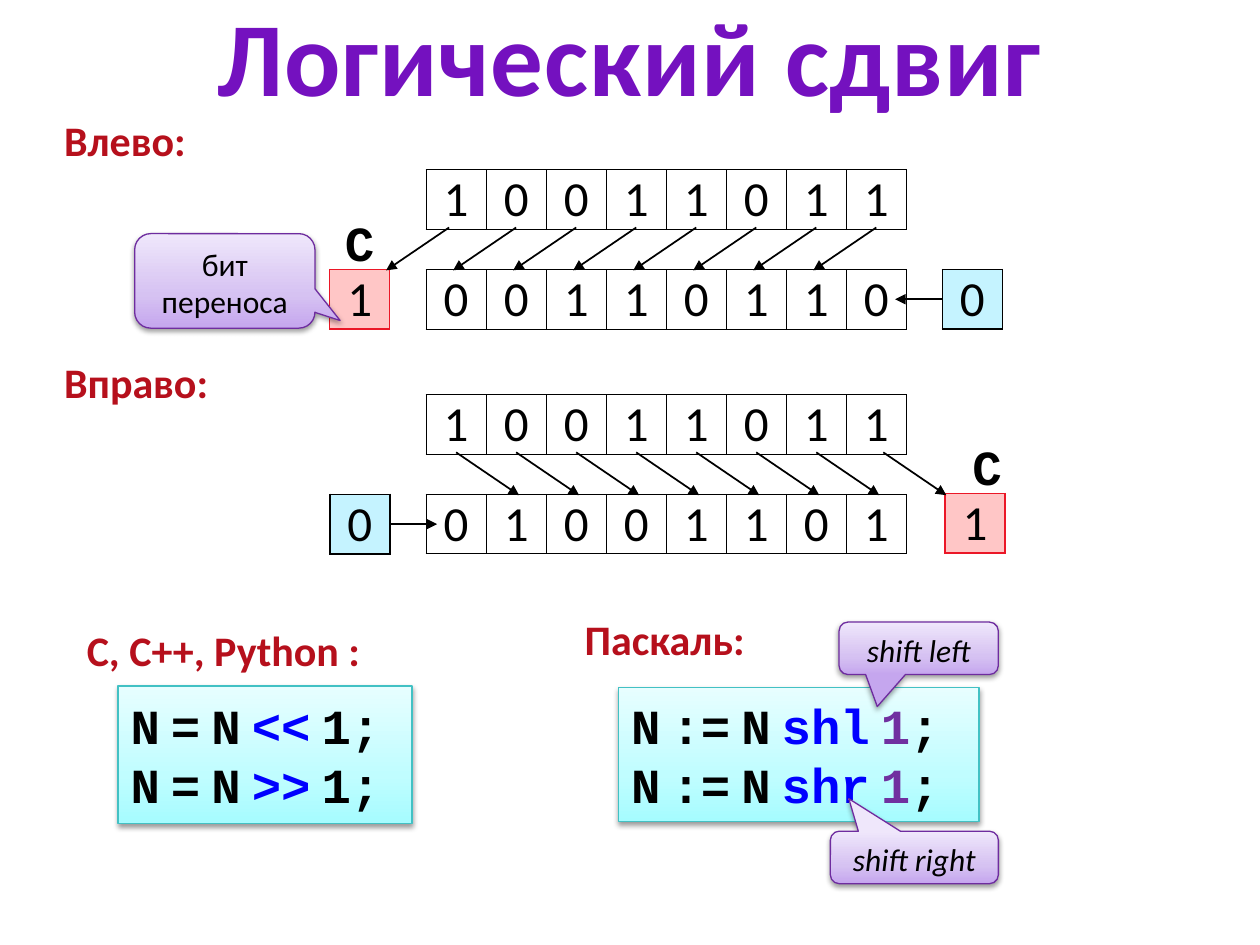
from lxml import etree
from pptx import Presentation
from pptx import util as u
from pptx.dml import color
from pptx.enum import shapes, text
from pptx.oxml import ns, xmlchemy
from pptx import oxml

COLORS = {"black": "000000", "title": "7411BF", "heading": "B6101C", "keyword": "0000FF",
          "number": "7030A0", "carry": "FFC6C6", "carry_line": "EB1727", "input": "C5F3FF",
          "callout_line": "6E2C9F", "code_line": "42C1C4"}
GRADIENTS = {"callout": ("C5A6EE", "D6C2F2", "EFE7FB"), "code": ("A6FCFF", "C0FDFF", "E7FEFF")}
FORMATS = {
    "title": {"name": "Calibri", "size": u.Pt(60), "bold": True},
    "heading": {"name": "Calibri", "size": u.Pt(24), "bold": True},
    "bit": {"name": "Calibri", "size": u.Pt(28), "bold": False},
    "code": {"name": "Courier New", "size": u.Pt(28), "bold": True},
    "space": {"name": "Calibri", "size": u.Pt(28), "bold": True},
    "note": {"name": "Calibri", "size": u.Pt(18), "bold": False},
    "command": {"name": "Calibri", "size": u.Pt(18), "bold": False, "italic": True},
}
CELL, ROW, ROW_STEP, REACH = 34.3, 34, 57, 36
ALIGN = text.PP_ALIGN


def rgb(name):
    """Return the named palette colour."""
    return color.RGBColor.from_string(COLORS[name])


def points(*lengths):
    """Convert numbers to lengths in points."""
    return [u.Pt(length) for length in lengths]


def add_run(paragraph, words, style, tint="black"):
    """Append one formatted run to a paragraph."""
    run = paragraph.add_run()
    run.text = words
    for name, value in FORMATS[style].items():
        setattr(run.font, name, value)
    run.font.color.rgb = rgb(tint)
    return run


def add_xml(parent, markup):
    """Append a DrawingML fragment to an element."""
    element = oxml.parse_xml(markup.replace(" ", f" {ns.nsdecls('a')} ", 1))
    parent.append(element)
    return element


def add_label(slide, left, top, width, words, style="heading", tint="heading", align=ALIGN.LEFT):
    """Place a one-line label."""
    label = slide.shapes.add_textbox(*points(left, top, width, 36))
    label.text_frame.word_wrap = False
    label.text_frame.auto_size = text.MSO_AUTO_SIZE.SHAPE_TO_FIT_TEXT
    paragraph = label.text_frame.paragraphs[0]
    paragraph.alignment = align
    add_run(paragraph, words, style, tint)


def add_bits(slide, left, top, bits, border="black", weight=0.5, fill=None):
    """Place a row of bits as a table with one cell for each bit."""
    frame = slide.shapes.add_table(1, len(bits), *points(left, top, CELL * len(bits), ROW))
    table = frame.table
    table.first_row = table.horz_banding = False
    for column, bit in enumerate(bits):
        table.columns[column].width = u.Pt(CELL)
        cell = table.cell(0, column)
        margins = {"margin_left": 5.5, "margin_right": 5.5, "margin_top": 0, "margin_bottom": 0}
        for name, value in margins.items():
            setattr(cell, name, u.Pt(value))
        properties = cell._tc.get_or_add_tcPr()
        for side in "LRTB":
            add_xml(properties, f'<a:ln{side} w="{u.Pt(weight)}"><a:solidFill>'
                                f'<a:srgbClr val="{COLORS[border]}"/></a:solidFill></a:ln{side}>')
        if fill:
            cell.fill.solid()
            cell.fill.fore_color.rgb = rgb(fill)
        else:
            cell.fill.background()
        paragraph = cell.text_frame.paragraphs[0]
        paragraph.alignment = ALIGN.CENTER
        add_run(paragraph, bit, "bit")


def add_arrow(slide, start_x, start_y, end_x, end_y):
    """Draw a thin black arrow."""
    arrow = slide.shapes.add_connector(shapes.MSO_CONNECTOR.STRAIGHT,
                                       *points(start_x, start_y, end_x, end_y))
    arrow.line.color.rgb = rgb("black")
    arrow.line.width = u.Pt(1)
    etree.SubElement(arrow.line._get_or_add_ln(), ns.qn("a:tailEnd"), type="triangle")
    etree.SubElement(arrow._element.spPr, ns.qn("a:effectLst"))


def add_shift(slide, left, top, direction, source, result, carry, entry):
    """Draw a shift of a byte; direction is -1 for left and 1 for right."""
    lower = top + ROW_STEP
    carry_left, carry_top, label_shift = carry
    add_bits(slide, left, top, source)
    add_bits(slide, left, lower, result)
    add_bits(slide, carry_left, carry_top, source[0 if direction < 0 else -1],
             "carry_line", 0.75, "carry")
    outgoing = 0 if direction < 0 else len(source) - 1
    for column in range(len(source)):
        start = left + (column + 0.5) * CELL + (4 * direction if column == outgoing else 0)
        add_arrow(slide, start, top + 33, start + direction * REACH, lower + 0.5)
    entry_edge = entry + (CELL - 9 if direction > 0 else 9)
    add_arrow(slide, entry_edge, lower + 17, entry_edge + direction * REACH, lower + 17)
    add_bits(slide, entry, lower, "0", weight=1, fill="input")
    add_label(slide, carry_left + label_shift + 1, carry_top - 36, 32, "С", "code", "black",
              ALIGN.CENTER)


def add_panel(slide, kind, box, look, adjustments=()):
    """Place a shadowed gradient shape and return it."""
    panel = slide.shapes.add_shape(kind, *points(*box))
    for index, value in enumerate(adjustments):
        panel.adjustments[index] = value
    panel.line.color.rgb = rgb(look + "_line")
    panel.line.width = u.Pt(0.75)
    properties = panel._element.spPr
    stops = "".join(f'<a:gs pos="{place}"><a:srgbClr val="{tint}"/></a:gs>'
                    for place, tint in zip((0, 35000, 100000), GRADIENTS[look]))
    gradient = add_xml(properties, f'<a:gradFill rotWithShape="1"><a:gsLst>{stops}</a:gsLst>'
                                   '<a:lin ang="16200000" scaled="1"/></a:gradFill>')
    properties.find(ns.qn("a:prstGeom")).addnext(gradient)
    add_xml(properties, f'<a:effectLst ><a:outerShdw blurRad="{u.Pt(3.1)}" dist="{u.Pt(1.6)}" '
                        'dir="5400000" rotWithShape="0"><a:srgbClr val="000000">'
                        '<a:alpha val="38000"/></a:srgbClr></a:outerShdw></a:effectLst>')
    return panel


def add_callout(slide, box, words, pointer, style="command"):
    """Place a speech callout."""
    callout = add_panel(slide, shapes.MSO_SHAPE.ROUNDED_RECTANGULAR_CALLOUT, box, "callout",
                        (*pointer, 0.17))
    callout.text_frame.word_wrap = True
    callout.text_frame.vertical_anchor = text.MSO_ANCHOR.TOP
    paragraph = callout.text_frame.paragraphs[0]
    paragraph.alignment = ALIGN.CENTER
    add_run(paragraph, words, style)


def add_code(slide, box, lines):
    """Place a code panel; each line lists its coloured pieces."""
    frame = add_panel(slide, shapes.MSO_SHAPE.RECTANGLE, box, "code").text_frame
    frame.word_wrap = False
    frame.vertical_anchor = text.MSO_ANCHOR.MIDDLE
    for number, line in enumerate(lines):
        paragraph = frame.add_paragraph() if number else frame.paragraphs[0]
        paragraph.alignment = ALIGN.LEFT
        for piece, tint in line:
            for index, word in enumerate(piece.split(" ")):
                if index:
                    add_run(paragraph, " ", "space")
                if word:
                    add_run(paragraph, word, "code", tint)


def add_title(slide, box, words):
    """Place the slide title in its placeholder."""
    title = slide.shapes.title
    for name, value in zip(("left", "top", "width", "height"), points(*box)):
        setattr(title, name, value)
    title.text_frame.auto_size = text.MSO_AUTO_SIZE.NONE
    title.text_frame.vertical_anchor = text.MSO_ANCHOR.MIDDLE
    paragraph = title.text_frame.paragraphs[0]
    paragraph.alignment = ALIGN.CENTER
    add_run(paragraph, words, "title", "title").font._element.set("spc", "50")


def main():
    """Build and save the slide."""
    presentation = Presentation()
    presentation.slide_width, presentation.slide_height = points(720, 540)
    slide = presentation.slides.add_slide(presentation.slide_layouts[5])
    add_title(slide, (36, 0, 648, 62), "Логический сдвиг")
    for left, top, width, words in ((29.5, 62, 85, "Влево:"), (29.5, 200, 98, "Вправо:"),
                                    (42.5, 353.5, 173, "С, C++, Python :"),
                                    (327, 347, 107, "Паскаль:")):
        add_label(slide, left, top, width, words)
    add_shift(slide, 243.5, 97, -1, "10011011", "00110110", (188.5, 154, 0), 538.5)
    add_shift(slide, 243.5, 225.5, 1, "10011011", "01001101", (540, 282, 7), 188.5)
    add_callout(slide, (77, 133.5, 103, 54), "бит переноса", (0.64, 0.42), "note")
    add_code(slide, (67.5, 392, 168, 78.5),
             [[("N = N ", "black"), (sign + " ", "keyword"), ("1;", "black")]
              for sign in ("<<", ">>")])
    add_code(slide, (353.5, 393, 206, 76.5),
             [[("N := N ", "black"), (word + " ", "keyword"), ("1", "number"), (";", "black")]
              for word in ("shl", "shr")])
    add_callout(slide, (479.5, 355.5, 91, 30), "shift left", (-0.26, 1.11))
    add_callout(slide, (474.5, 475, 96, 30), "shift right", (-0.39, -1.12))
    presentation.save("out.pptx")


if __name__ == "__main__":
    main()
